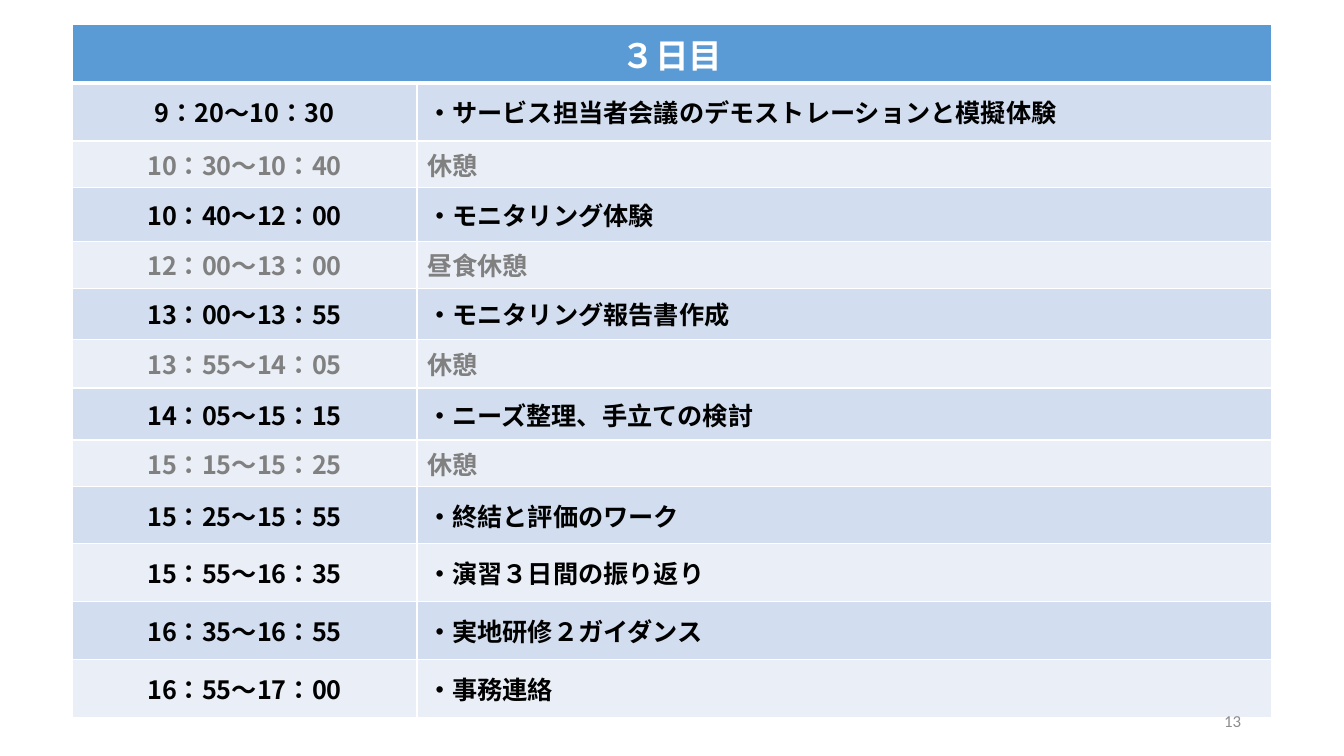
from lxml import etree
from pptx import Presentation
from pptx.dml.color import RGBColor
from pptx.enum.text import MSO_ANCHOR, PP_ALIGN
from pptx.oxml.ns import qn
from pptx.util import Emu, Pt

LEFT, MID, RIGHT = PP_ALIGN.LEFT, PP_ALIGN.CENTER, PP_ALIGN.RIGHT
CENTER = MSO_ANCHOR.MIDDLE
SCALE = 914400 / 100.8  # EMU per px
FACE = "Noto Sans CJK JP"
COLORS = {
    "head": "5B9BD5", "dark": "D2DEEF", "light": "EAEFF7", "rule": "FFFFFF",
    "title": "FFFFFF", "text": "000000", "break": "808080", "page": "8C8C8C",
}
COLS = [345, 855]
HEAD = 59

# Row height, time, content
PLAN = [
    (58, "9：20～10：30", "・サービス担当者会議のデモストレーションと模擬体験"),
    (46, "10：30～10：40", "休憩"),
    (54, "10：40～12：00", "・モニタリング体験"),
    (45, "12：00～13：00", "昼食休憩"),
    (51, "13：00～13：55", "・モニタリング報告書作成"),
    (49, "13：55～14：05", "休憩"),
    (52, "14：05～15：15", "・ニーズ整理、手立ての検討"),
    (45, "15：15～15：25", "休憩"),
    (57, "15：25～15：55", "・終結と評価のワーク"),
    (58, "15：55～16：35", "・演習３日間の振り返り"),
    (58, "16：35～16：55", "・実地研修２ガイダンス"),
    (58, "16：55～17：00", "・事務連絡"),
]


def px(n):
    return Emu(round(n * SCALE))


def color(name):
    return RGBColor.from_string(COLORS[name])


def write(frame, text, size, ink, align, face=FACE, bold=True):
    para = frame.paragraphs[0]
    para.text = text
    para.alignment = align
    font = para.font
    font.size, font.bold, font.name = Pt(size), bold, face
    font.color.rgb = color(ink)
    # East Asian glyphs need their own face
    props = para._p.pPr.find(qn("a:defRPr"))
    etree.SubElement(props, qn("a:ea"), typeface=face)


def edge(cell, base=1):
    props = cell._tc.get_or_add_tcPr()
    sides = [("L", 1), ("R", 1), ("T", 1), ("B", base)]
    for spot, (side, width) in enumerate(sides):
        line = etree.Element(qn(f"a:ln{side}"), w=str(Pt(width)))
        fill = etree.SubElement(line, qn("a:solidFill"))
        etree.SubElement(fill, qn("a:srgbClr"), val=COLORS["rule"])
        props.insert(spot, line)


def paint(cell, fill, base=1):
    cell.fill.solid()
    cell.fill.fore_color.rgb = color(fill)
    cell.vertical_anchor = CENTER
    edge(cell, base)


def add_plan(slide):
    highs = [HEAD] + [row[0] for row in PLAN]
    frame = slide.shapes.add_table(
        len(highs), len(COLS), px(72), px(24), px(sum(COLS)), px(sum(highs)))
    table = frame.table
    for col, wide in zip(table.columns, COLS):
        col.width = px(wide)
    for row, high in zip(table.rows, highs):
        row.height = px(high)

    # Heading across both columns
    head = table.cell(0, 0)
    head.merge(table.cell(0, 1))
    for cell in table.rows[0].cells:
        paint(cell, "head", 3)
    write(head.text_frame, "３日目", 24, "title", MID)

    # Sessions in black, breaks in grey
    for i, (_, time, topic) in enumerate(PLAN, 1):
        ink = "text" if topic.startswith("・") else "break"
        band = "dark" if i % 2 else "light"
        for j, (text, align) in enumerate([(time, MID), (topic, LEFT)]):
            cell = table.cell(i, j)
            paint(cell, band)
            write(cell.text_frame, text, 18, ink, align)


def add_page(slide):
    box = slide.shapes.add_textbox(px(949), px(701), px(302), px(40))
    frame = box.text_frame
    frame.word_wrap = True
    frame.vertical_anchor = CENTER
    write(frame, "13", 12, "page", RIGHT, "Calibri", False)


def main():
    deck = Presentation()
    deck.slide_width, deck.slide_height = px(1344), px(756)
    slide = deck.slides.add_slide(deck.slide_layouts[6])
    add_plan(slide)
    add_page(slide)
    deck.save("out.pptx")


if __name__ == "__main__":
    main()
